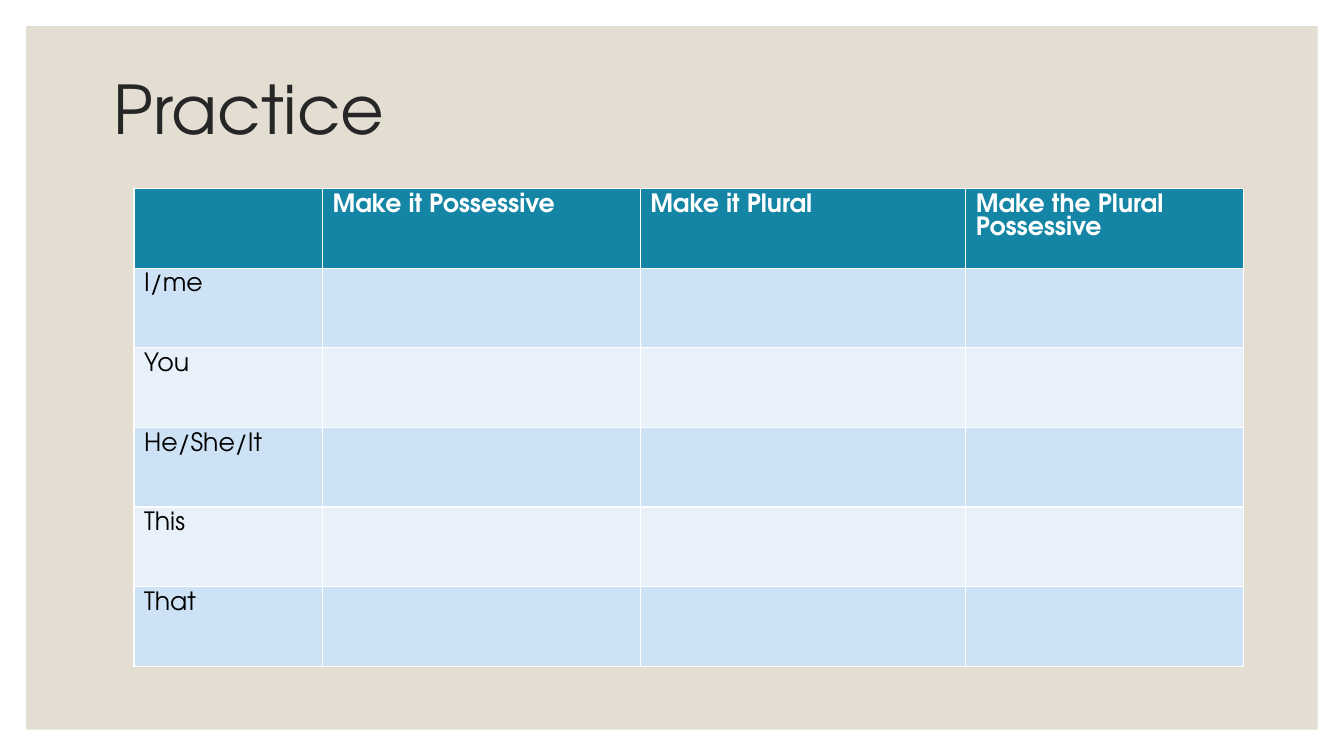
from pptx import Presentation
from pptx.dml.color import RGBColor
from pptx.enum.shapes import MSO_SHAPE
from pptx.enum.text import MSO_ANCHOR
from pptx.util import Pt

TITLE = "Practice"
HEADS = ["", "Make it Possessive", "Make it Plural", "Make the Plural Possessive"]
WORDS = ["I/me", "You", "He/She/It", "This", "That"]

PX = 9144  # 100 px to the inch
FONT = "TeX Gyre Adventor"
COLORS = {
    "panel": "E3DED1", "title": "262626", "head": "1485A4",
    "odd": "CDE3F5", "even": "E8F1FA", "white": "FFFFFF", "black": "000000",
}
WIDE, HIGH, EDGE = 1333, 750, 26
COLS = [187, 315, 323, 275]
ROW = 79


def box(*sides):
    return [side * PX for side in sides]


def tint(name):
    return RGBColor.from_string(COLORS[name])


def paint(fill, name):
    fill.solid()
    fill.fore_color.rgb = tint(name)


def write(frame, text, size, color, bold=False):
    para = frame.paragraphs[0]
    para.text = text
    font = para.font
    font.name, font.size, font.bold = FONT, Pt(size), bold
    font.color.rgb = tint(color)
    return para


deck = Presentation()
deck.slide_width, deck.slide_height = box(WIDE, HIGH)
slide = deck.slides.add_slide(deck.slide_layouts[6])
shapes = slide.shapes

panel = shapes.add_shape(
    MSO_SHAPE.RECTANGLE, *box(EDGE, EDGE, WIDE - 2 * EDGE, HIGH - 2 * EDGE))
panel.shadow.inherit = False
paint(panel.fill, "panel")
panel.line.fill.background()

title = shapes.add_textbox(*box(103, 37, 1100, 150)).text_frame
title.word_wrap = True
title.vertical_anchor = MSO_ANCHOR.MIDDLE
write(title, TITLE, 48, "title").line_spacing = 0.9

rows = [HEADS] + [[word, "", "", ""] for word in WORDS]
table = shapes.add_table(
    len(rows), len(COLS), *box(133, 187, sum(COLS), ROW * len(rows))).table
for col, width in zip(table.columns, COLS):
    col.width = width * PX
for r, row in enumerate(rows):
    back = "head" if r == 0 else "odd" if r % 2 else "even"
    ink = "black" if r else "white"
    for c, text in enumerate(row):
        cell = table.cell(r, c)
        paint(cell.fill, back)
        write(cell.text_frame, text, 18, ink, bold=r == 0)

deck.save("out.pptx")
